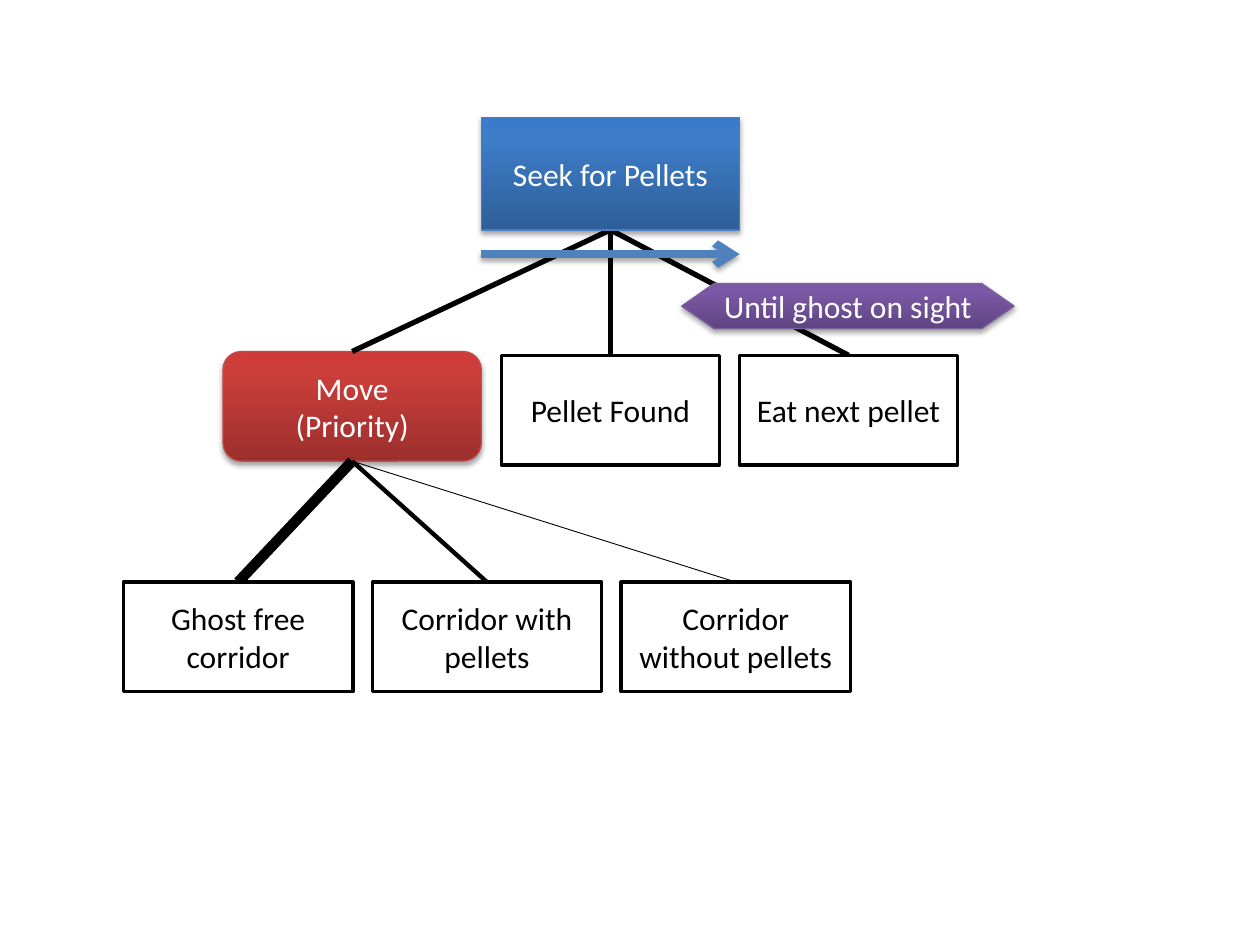
from lxml import etree
from pptx import Presentation
from pptx.dml.color import RGBColor
from pptx.enum.shapes import MSO_CONNECTOR, MSO_SHAPE
from pptx.enum.text import MSO_ANCHOR, PP_ALIGN
from pptx.oxml.ns import qn
from pptx.util import Inches, Pt

RECT, ROUND, HEXAGON = MSO_SHAPE.RECTANGLE, MSO_SHAPE.ROUNDED_RECTANGLE, MSO_SHAPE.HEXAGON
STRAIGHT = MSO_CONNECTOR.STRAIGHT
CENTER, MIDDLE = PP_ALIGN.CENTER, MSO_ANCHOR.MIDDLE
TOP, BOTTOM = 0, 2

BLACK = RGBColor(0x00, 0x00, 0x00)
WHITE = RGBColor(0xFF, 0xFF, 0xFF)
ARROW_BLUE = RGBColor(0x4F, 0x81, 0xBD)
BLUE_EDGE = RGBColor(0x4B, 0x7E, 0xBC)
RED_EDGE = RGBColor(0xBF, 0x4C, 0x48)
PURPLE_EDGE = RGBColor(0x7D, 0x60, 0xA0)
# Gradient stops from bottom to top, at 0, 80 and 100 %
BLUES = RGBColor(0x2F, 0x5F, 0x99), RGBColor(0x3D, 0x7C, 0xC7), RGBColor(0x3A, 0x7C, 0xCB)
REDS = RGBColor(0x9C, 0x2F, 0x2D), RGBColor(0xCB, 0x3E, 0x3A), RGBColor(0xCE, 0x3B, 0x37)
PURPLES = RGBColor(0x5F, 0x44, 0x80), RGBColor(0x7B, 0x58, 0xA6), RGBColor(0x7C, 0x57, 0xA8)

prs = Presentation()
prs.slide_width, prs.slide_height = Inches(10), Inches(7.5)
# Grid of 100 columns by 100 rows
COL, ROW = prs.slide_width / 100, prs.slide_height / 100
slide = prs.slides.add_slide(prs.slide_layouts[6])
tree = slide.shapes


def set_shadow(item, visible):
    properties = item._element.spPr
    effects = properties.find(qn("a:effectLst"))
    if effects is None:
        effects = etree.SubElement(properties, qn("a:effectLst"))
    if visible:
        shadow = etree.SubElement(effects, qn("a:outerShdw"), blurRad=str(Pt(3.1)),
                                  dist=str(Pt(1.8)), dir="5400000", rotWithShape="0")
        color = etree.SubElement(shadow, qn("a:srgbClr"), val=str(BLACK))
        etree.SubElement(color, qn("a:alpha"), val="35000")


def add_node(text, left, top, width, height, kind=RECT, stops=None, edge=BLACK,
             edge_width=2, color=BLACK, adjust=None, wrap=True):
    node = tree.add_shape(kind, int(left * COL), int(top * ROW), int(width * COL), int(height * ROW))
    if adjust is not None:
        node.adjustments[0] = adjust
    if stops:
        node.fill.gradient()
        node.fill.gradient_angle = 90
        stop_list = node._element.spPr.find(".//" + qn("a:gsLst"))
        stop_list.clear()
        for position, stop in zip((0, 80000, 100000), stops):
            entry = etree.SubElement(stop_list, qn("a:gs"), pos=str(position))
            etree.SubElement(entry, qn("a:srgbClr"), val=str(stop))
    else:
        node.fill.solid()
        node.fill.fore_color.rgb = WHITE
    node.line.color.rgb = edge
    node.line.width = Pt(edge_width)
    node.shadow.inherit = False
    set_shadow(node, bool(stops))
    frame = node.text_frame
    frame.word_wrap = wrap
    frame.vertical_anchor = MIDDLE
    frame.text = text
    for paragraph in frame.paragraphs:
        paragraph.alignment = CENTER
        paragraph.font.name = "Calibri"
        paragraph.font.size = Pt(18)
        paragraph.font.color.rgb = color
    return node


# Tree nodes; the move node comes first so that branches lie over it
move = add_node("Move\n(Priority)", 17.7, 37.2, 20.5, 11.6, kind=ROUND,
                stops=REDS, edge=RED_EDGE, edge_width=0.75, color=WHITE)
seek = add_node("Seek for Pellets", 38.2, 12.4, 20.5, 11.93, kind=ROUND, adjust=0,
                stops=BLUES, edge=BLUE_EDGE, edge_width=0.75, color=WHITE)
corridors = [add_node(text, 9.8 + 19.75 * i, 61.6, 18.2, 11.6) for i, text in enumerate(
    ("Ghost free corridor", "Corridor with pellets", "Corridor without pellets"))]
steps = [add_node(text, 39.8 + 18.9 * i, 37.6, 17.3, 11.6) for i, text in enumerate(
    ("Pellet Found", "Eat next pellet"))]

# Branches, thicker for higher priority, placed just above the move node
branches = [(move, corridor, weight) for corridor, weight in zip(corridors, (6, 2.5, 0.5))]
branches += [(seek, step, 3) for step in (move, *steps)]
for parent, child, weight in branches:
    branch = tree.add_connector(STRAIGHT, 0, 0, 0, 0)
    branch.begin_connect(child, TOP)
    branch.end_connect(parent, BOTTOM)
    branch.line.color.rgb = BLACK
    branch.line.width = Pt(weight)
    set_shadow(branch, False)
    move._element.addnext(branch._element)

# Sequence arrow below the root
sequence_y = int(26.9 * ROW)
sequence = tree.add_connector(STRAIGHT, seek.left, sequence_y, seek.left + seek.width, sequence_y)
sequence.line.color.rgb = ARROW_BLUE
sequence.line.width = Pt(4.5)
etree.SubElement(sequence.line._get_or_add_ln(), qn("a:tailEnd"), type="arrow")
set_shadow(sequence, True)

# Condition on the last branch
add_node("Until ghost on sight", 54.1, 30, 26.4, 4.8, kind=HEXAGON, adjust=0.72, wrap=False,
         stops=PURPLES, edge=PURPLE_EDGE, edge_width=0.75, color=WHITE)

prs.save("out.pptx")
